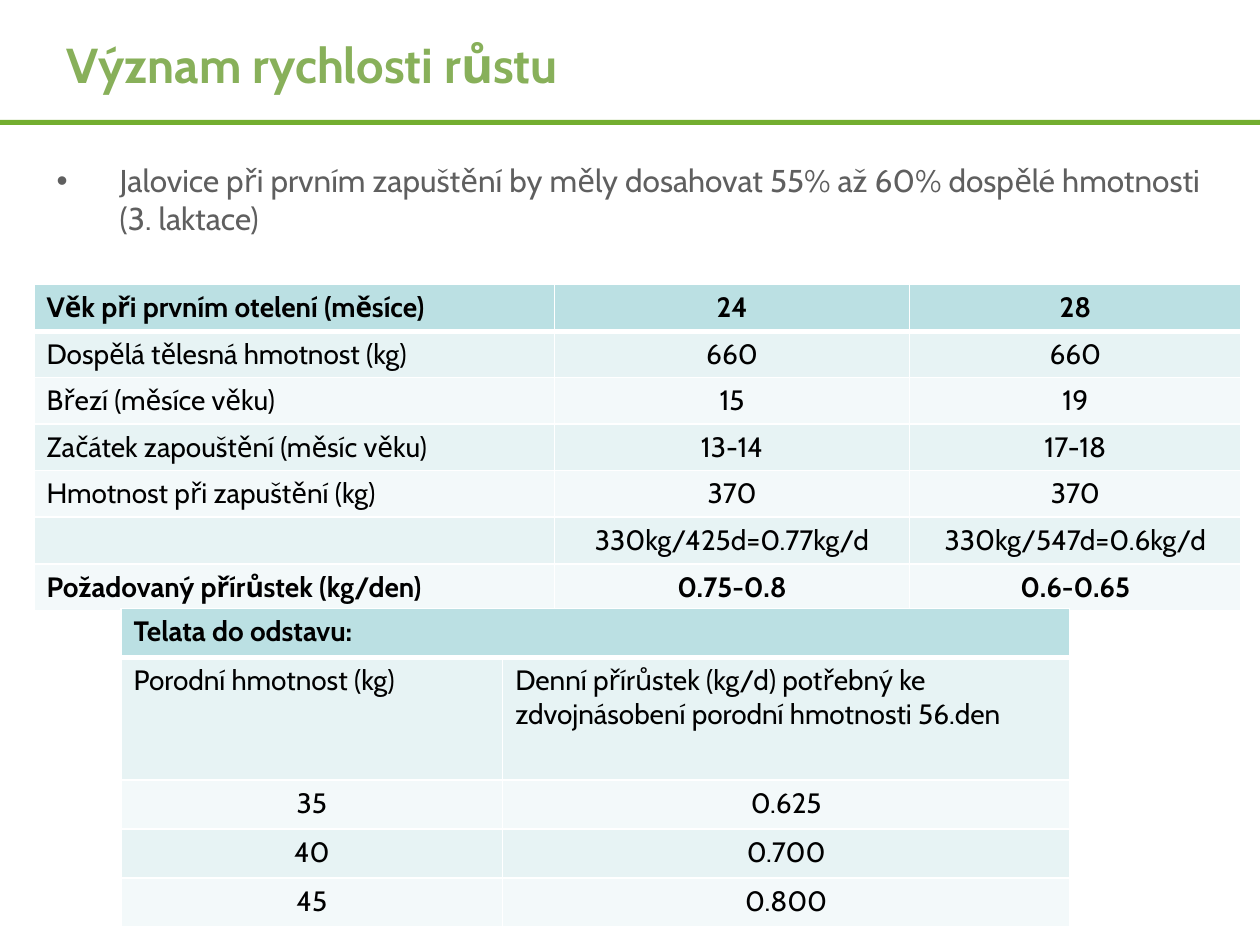
from lxml import etree
from pptx import Presentation
from pptx import util as u
from pptx.dml.color import RGBColor
from pptx.enum import shapes, text
from pptx.oxml.ns import qn

deck = Presentation()
W = deck.slide_width = u.Inches(10)
H = deck.slide_height = u.Inches(7.5)
slide = deck.slides.add_slide(deck.slide_layouts[1])


def color(value):
    return RGBColor.from_string(value)


def write(paragraph, words, size, ink, bold=False):
    run = paragraph.add_run()
    run.text = words
    run.font.name = "Cabin"
    run.font.size = u.Pt(size)
    run.font.bold = bold
    run.font.color.rgb = color(ink)


rule = slide.shapes.add_shape(shapes.MSO_SHAPE.RECTANGLE, 0, int(H * 0.127), W, u.Inches(0.04))
rule.shadow.inherit = False
rule.fill.solid()
rule.fill.fore_color.rgb = color("73AE2F")
rule.line.fill.background()

heading = slide.shapes.title
heading.left, heading.top = int(W * 0.043), u.Inches(0.05)
heading.width, heading.height = int(W * 0.9), u.Inches(0.91)
heading.text_frame.vertical_anchor = text.MSO_ANCHOR.MIDDLE
heading_line = heading.text_frame.paragraphs[0]
heading_line.alignment = text.PP_ALIGN.LEFT
write(heading_line, "Význam rychlosti růstu", 28, "88B05A", True)

rule_of_weight = slide.placeholders[1]
rule_of_weight.left, rule_of_weight.top = int(W * 0.035), u.Inches(1.23)
rule_of_weight.width, rule_of_weight.height = int(W * 0.929), int(H * 0.45)
weight_line = rule_of_weight.text_frame.paragraphs[0]
weight_line.space_before = u.Pt(0)
weight_line.space_after = u.Pt(16.2)
indent = weight_line._p.get_or_add_pPr()
indent.set("marL", str(u.Inches(0.5)))
indent.set("indent", str(-u.Inches(0.5)))
etree.SubElement(indent, qn("a:buFont")).set("typeface", "Arial")
etree.SubElement(indent, qn("a:buChar")).set("char", "•")
write(weight_line, "Jalovice při prvním zapuštění by měly dosahovat 55% až 60% dospělé hmotnosti (3. laktace)",
      18, "5F5F5F")

heifers = [
    ["Věk při prvním otelení (měsíce)", "24", "28"],
    ["Dospělá tělesná hmotnost (kg)", "660", "660"],
    ["Březí (měsíce věku)", "15", "19"],
    ["Začátek zapouštění (měsíc věku)", "13-14", "17-18"],
    ["Hmotnost při zapuštění (kg)", "370", "370"],
    ["", "330kg/425d=0.77kg/d", "330kg/547d=0.6kg/d"],
    ["Požadovaný přírůstek (kg/den)", "0.75-0.8", "0.6-0.65"],
]
calves = [
    ["Telata do odstavu:", ""],
    ["Porodní hmotnost (kg)",
     "Denní přírůstek (kg/d) potřebný ke zdvojnásobení porodní hmotnosti 56.den"],
    ["35", "0.625"],
    ["40", "0.700"],
    ["45", "0.800"],
]
tables = [
    (heifers, 0.27, 2.26, [4.13, 2.82, 2.63], [2.57 / 7] * 7, {0, 6}, lambda r, c: c > 0),
    (calves, 0.96, 4.83, [3.03, 4.5], [0.39, 0.97, 0.39, 0.39, 0.39], {0}, lambda r, c: r > 1),
]

for content, left, top, columns, rows, bold_rows, centred in tables:
    grid = slide.shapes.add_table(len(rows), len(columns), u.Inches(left), u.Inches(top),
                                  u.Inches(sum(columns)), u.Inches(sum(rows))).table
    for column, width in zip(grid.columns, columns):
        column.width = u.Inches(width)
    for row, height in zip(grid.rows, rows):
        row.height = u.Inches(height)
    for r, line in enumerate(content):
        for c, words in enumerate(line):
            cell = grid.cell(r, c)
            borders = cell._tc.get_or_add_tcPr()
            for side in "LRTB":
                thick = (r, side) in {(0, "B"), (1, "T")}
                edge = etree.SubElement(borders, qn("a:ln" + side), w=str(u.Pt(3 if thick else 1)))
                paint = etree.SubElement(edge, qn("a:solidFill"))
                etree.SubElement(paint, qn("a:srgbClr")).set("val", "FFFFFF")
            cell.fill.solid()
            cell.fill.fore_color.rgb = color("BBE0E3" if r == 0 else "E7F3F4" if r % 2 else "F3F9FA")
            paragraph = cell.text_frame.paragraphs[0]
            if centred(r, c):
                paragraph.alignment = text.PP_ALIGN.CENTER
            if words:
                write(paragraph, words, 16, "000000", r in bold_rows)
            else:
                etree.SubElement(paragraph._p, qn("a:endParaRPr")).set("sz", "1600")
    if content is calves:
        grid.cell(0, 0).merge(grid.cell(0, 1))

deck.save("out.pptx")
